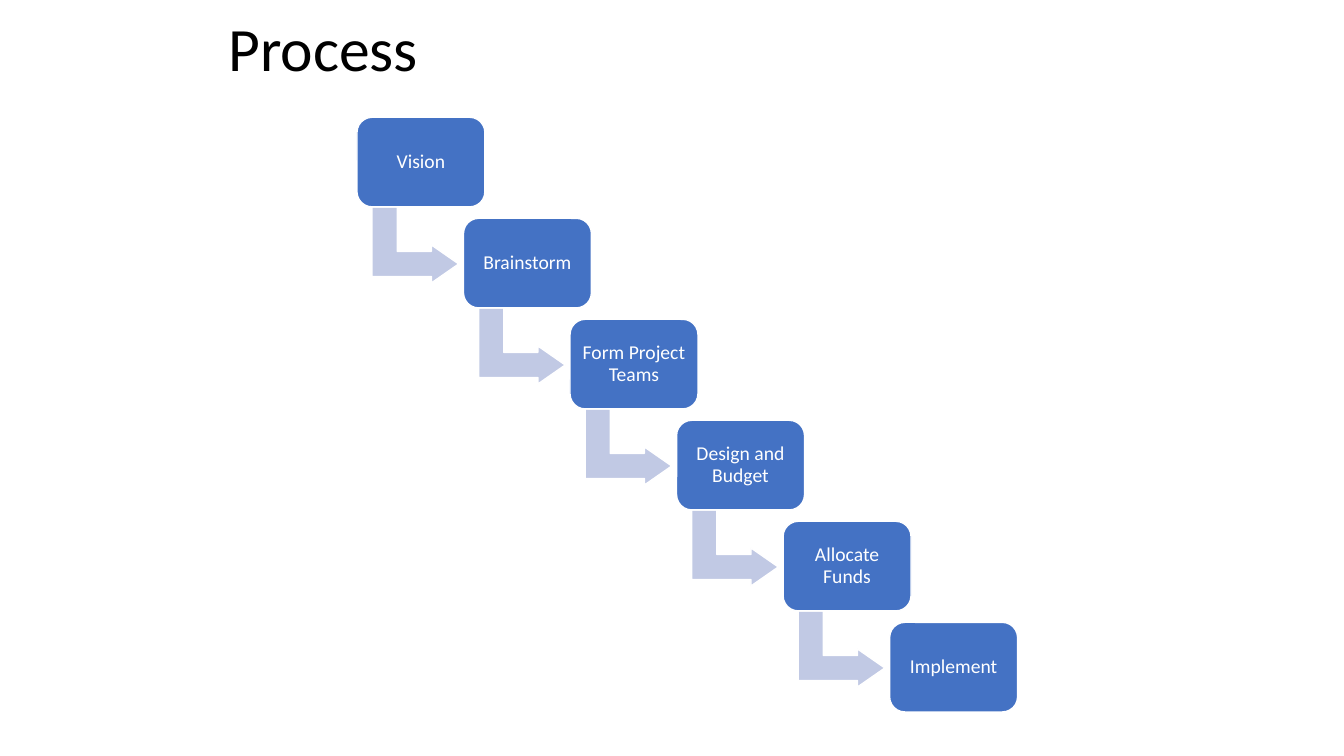
from pptx import Presentation
from pptx.dml.color import RGBColor
from pptx.enum.shapes import MSO_SHAPE
from pptx.enum.text import MSO_ANCHOR, PP_ALIGN
from pptx.util import Pt

ROUNDED = MSO_SHAPE.ROUNDED_RECTANGLE
BENT_ARROW = MSO_SHAPE.BENT_UP_ARROW
MIDDLE = MSO_ANCHOR.MIDDLE
LEFT, CENTER = PP_ALIGN.LEFT, PP_ALIGN.CENTER

TITLE = "Process"
STEPS = ["Vision", "Brainstorm", "Form Project Teams",
         "Design and Budget", "Allocate Funds", "Implement"]

FONT = "Calibri"
BLACK, WHITE, BLUE, PALE_BLUE = "000000", "FFFFFF", "4472C4", "C1C9E4"

FIRST_LEFT, FIRST_TOP = 255, 83.8
STEP_RIGHT, STEP_DOWN = 76.1, 72.15
BOX_WIDTH, BOX_HEIGHT = 91.4, 64
ARROW_RIGHT, ARROW_DOWN = 14.5, 60.2
ARROW_WIDTH, ARROW_HEIGHT = 54.4, 61.9
BOX_INSET = 4.3


def color(value):
    return RGBColor.from_string(value)


def write(shape, text, size, text_color, align):
    frame = shape.text_frame
    frame.word_wrap = True
    frame.vertical_anchor = MIDDLE
    para = frame.paragraphs[0]
    para.alignment = align
    para.line_spacing = 0.9
    span = para.add_run()
    span.text = text
    span.font.name = FONT
    span.font.size = Pt(size)
    span.font.color.rgb = color(text_color)
    return frame


def add_block(page, kind, left, top, width, height, fill, adjustments):
    block = page.shapes.add_shape(kind, Pt(left), Pt(top), Pt(width), Pt(height))
    block.shadow.inherit = False
    block.fill.solid()
    block.fill.fore_color.rgb = color(fill)
    block.line.color.rgb = color(WHITE)
    block.line.width = Pt(1)
    for index, value in enumerate(adjustments):
        block.adjustments[index] = value
    return block


def main():
    deck = Presentation()
    deck.slide_width, deck.slide_height = Pt(960), Pt(540)
    page = deck.slides.add_slide(deck.slide_layouts[6])

    title = page.shapes.add_textbox(Pt(156), Pt(0), Pt(648), Pt(74))
    write(title, TITLE, 44, BLACK, LEFT)

    for index, step in enumerate(STEPS):
        left = FIRST_LEFT + index * STEP_RIGHT
        top = FIRST_TOP + index * STEP_DOWN
        if index < len(STEPS) - 1:
            arrow = add_block(page, BENT_ARROW, left + ARROW_RIGHT, top + ARROW_DOWN,
                              ARROW_WIDTH, ARROW_HEIGHT, PALE_BLUE, [0.33, 0.25, 0.36])
            arrow.rotation = 90
        box = add_block(page, ROUNDED, left, top, BOX_WIDTH, BOX_HEIGHT, BLUE, [0.17])
        frame = write(box, step, 14, WHITE, CENTER)
        frame.margin_left = frame.margin_right = Pt(BOX_INSET)
        frame.margin_top = frame.margin_bottom = Pt(BOX_INSET)

    deck.save("out.pptx")


if __name__ == "__main__":
    main()
